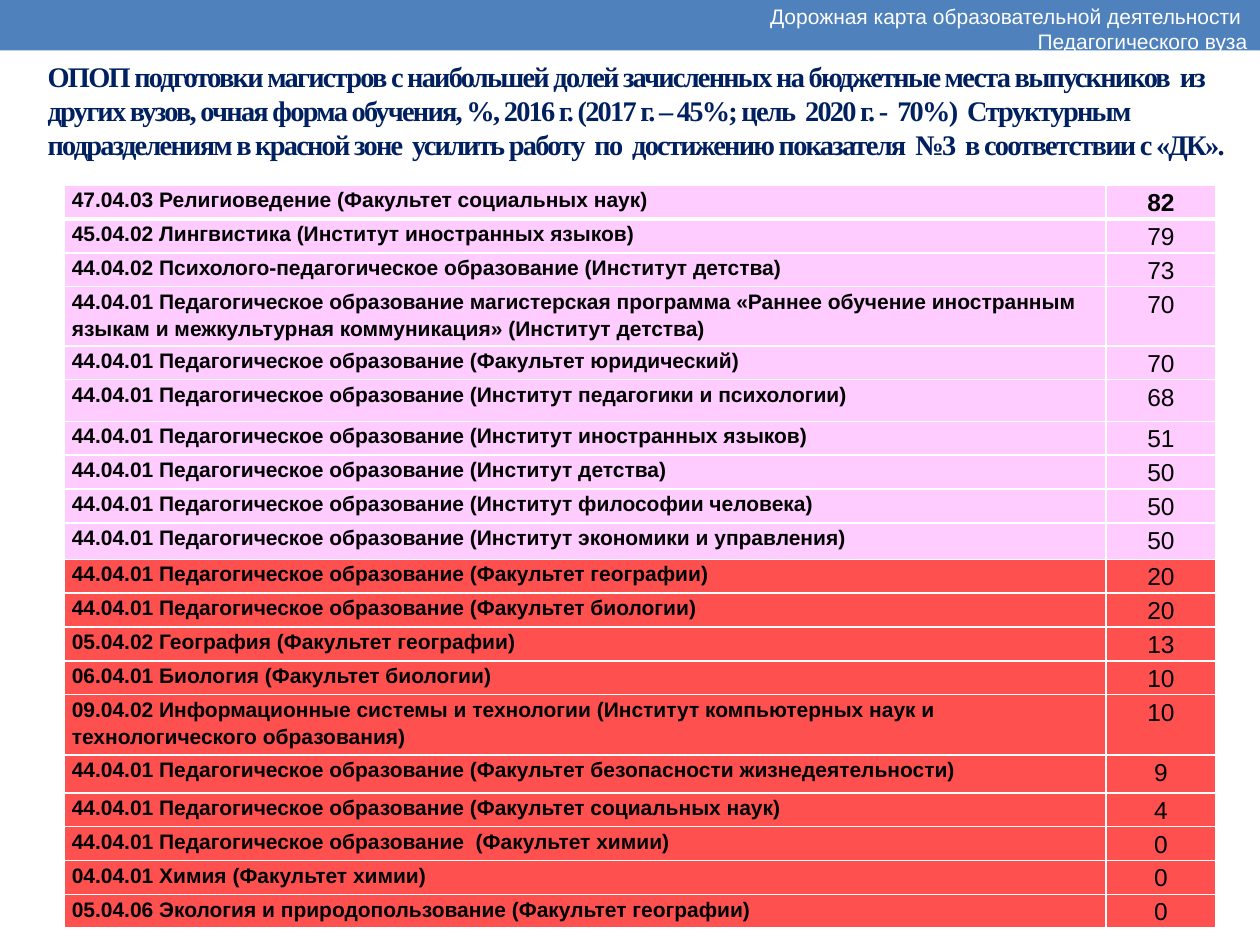
from lxml import etree
from pptx import Presentation
from pptx import util as u
from pptx.dml.color import RGBColor
from pptx.enum import shapes, text
from pptx.oxml.ns import qn

COLORS = {
    "band": "4F81BD",
    "title": "002060",
    "text": "000000",
    "white": "FFFFFF",
    "pink": "FFCCFF",
    "red": "FF5050",
}


def write(frame, lines, size, color="text", font="Arial", bold=False,
          align="LEFT", spacing=None, tracking=None, anchor="TOP",
          insets=(0.1, 0.05, 0.1, 0.05)):
    frame.word_wrap = True
    frame.vertical_anchor = text.MSO_ANCHOR[anchor]
    (frame.margin_left, frame.margin_top,
     frame.margin_right, frame.margin_bottom) = map(u.Inches, insets)
    for number, line in enumerate(lines):
        paragraph = frame.add_paragraph() if number else frame.paragraphs[0]
        paragraph.alignment = text.PP_ALIGN[align]
        paragraph.line_spacing = spacing
        run = paragraph.add_run()
        run.text = line
        run.font.name = font
        run.font.size = u.Pt(size)
        run.font.bold = bold
        run.font.color.rgb = RGBColor.from_string(COLORS[color])
        if tracking:
            run._r.get_or_add_rPr().set("spc", str(tracking * 100))


def add_borders(cell, widths):
    properties = cell._tc.get_or_add_tcPr()
    for position, (side, width) in enumerate(widths.items()):
        line = etree.Element(qn(f"a:ln{side}"), w=str(u.Pt(width)))
        fill = etree.SubElement(line, qn("a:solidFill"))
        etree.SubElement(fill, qn("a:srgbClr"), val=COLORS["white"])
        properties.insert(position, line)


prs = Presentation()
prs.slide_width = u.Inches(10)
prs.slide_height = u.Inches(7.5)
slide = prs.slides.add_slide(prs.slide_layouts[6])

band = slide.shapes.add_shape(
    shapes.MSO_SHAPE.RECTANGLE, 0, 0, prs.slide_width, u.Inches(0.4))
band.shadow.inherit = False
band.fill.solid()
band.fill.fore_color.rgb = RGBColor.from_string(COLORS["band"])
band.line.fill.background()

title = slide.shapes.add_textbox(
    u.Inches(0.28), u.Inches(0.44), u.Inches(9.53), u.Inches(0.87))
write(title.text_frame, [
    "ОПОП подготовки магистров с наибольшей долей зачисленных на бюджетные "
    "места выпускников  из других вузов, очная форма обучения, %, 2016 г. "
    "(2017 г. – 45%; цель  2020 г. -  70%)  Структурным подразделениям в "
    "красной зоне  усилить работу  по  достижению показателя  №3  в "
    "соответствии с «ДК»."],
    size=16.2, color="title", font="Times New Roman", bold=True,
    spacing=u.Pt(19.4), tracking=-1, anchor="MIDDLE",
    insets=(0.1, 0.05, 0, 0.05))

PED = "44.04.01 Педагогическое образование"
programs = [
    ("47.04.03 Религиоведение (Факультет социальных наук)", 82),
    ("45.04.02 Лингвистика (Институт иностранных языков)", 79),
    ("44.04.02 Психолого-педагогическое образование (Институт детства)", 73),
    (f"{PED} магистерская программа «Раннее обучение иностранным языкам "
     "и межкультурная коммуникация» (Институт детства)", 70),
    (f"{PED} (Факультет юридический)", 70),
    (f"{PED} (Институт педагогики и психологии)", 68),
    (f"{PED} (Институт иностранных языков)", 51),
    (f"{PED} (Институт детства)", 50),
    (f"{PED} (Институт философии человека)", 50),
    (f"{PED} (Институт экономики и управления)", 50),
    (f"{PED} (Факультет географии)", 20),
    (f"{PED} (Факультет биологии)", 20),
    ("05.04.02 География (Факультет географии)", 13),
    ("06.04.01 Биология (Факультет биологии)", 10),
    ("09.04.02 Информационные системы и технологии (Институт компьютерных "
     "наук и технологического образования)", 10),
    (f"{PED} (Факультет безопасности жизнедеятельности)", 9),
    (f"{PED} (Факультет социальных наук)", 4),
    (f"{PED}  (Факультет химии)", 0),
    ("04.04.01 Химия (Факультет химии)", 0),
    ("05.04.06 Экология и природопользование (Факультет географии)", 0),
]
special_heights = {0: 0.03, 3: 0.47, 5: 0.33, 9: 0.29, 14: 0.48, 15: 0.3}

ranking = slide.shapes.add_table(
    len(programs), 2, u.Inches(0.51), u.Inches(1.47),
    u.Inches(9.14), u.Inches(5.9)).table
ranking.horz_banding = False
ranking.columns[0].width = u.Inches(8.27)
ranking.columns[1].width = u.Inches(0.87)

for row, (program, share) in enumerate(programs):
    ranking.rows[row].height = u.Inches(special_heights.get(row, 0.26))
    zone = "pink" if share >= 50 else "red"
    borders = {"L": 1, "R": 1, "T": 3 if row == 1 else 1, "B": 1 if row else 3}
    columns = [
        (program, {"size": 12, "bold": True}),
        (str(share), {"size": 14, "bold": row == 0, "align": "CENTER"}),
    ]
    for column, (content, style) in enumerate(columns):
        cell = ranking.cell(row, column)
        cell.fill.solid()
        cell.fill.fore_color.rgb = RGBColor.from_string(COLORS[zone])
        write(cell.text_frame, [content], spacing=1.15, **style)
        cell.vertical_anchor = text.MSO_ANCHOR.TOP
        cell.margin_left = cell.margin_right = u.Inches(0.06)
        cell.margin_top = cell.margin_bottom = 0
        add_borders(cell, borders)

caption = slide.shapes.add_textbox(
    u.Inches(5.5), u.Inches(0.05), u.Inches(4.5), u.Inches(0.36))
write(caption.text_frame, [
    "Дорожная карта образовательной деятельности ",
    "Педагогического вуза"],
    size=12, color="white", align="RIGHT", anchor="MIDDLE")

prs.save("out.pptx")
